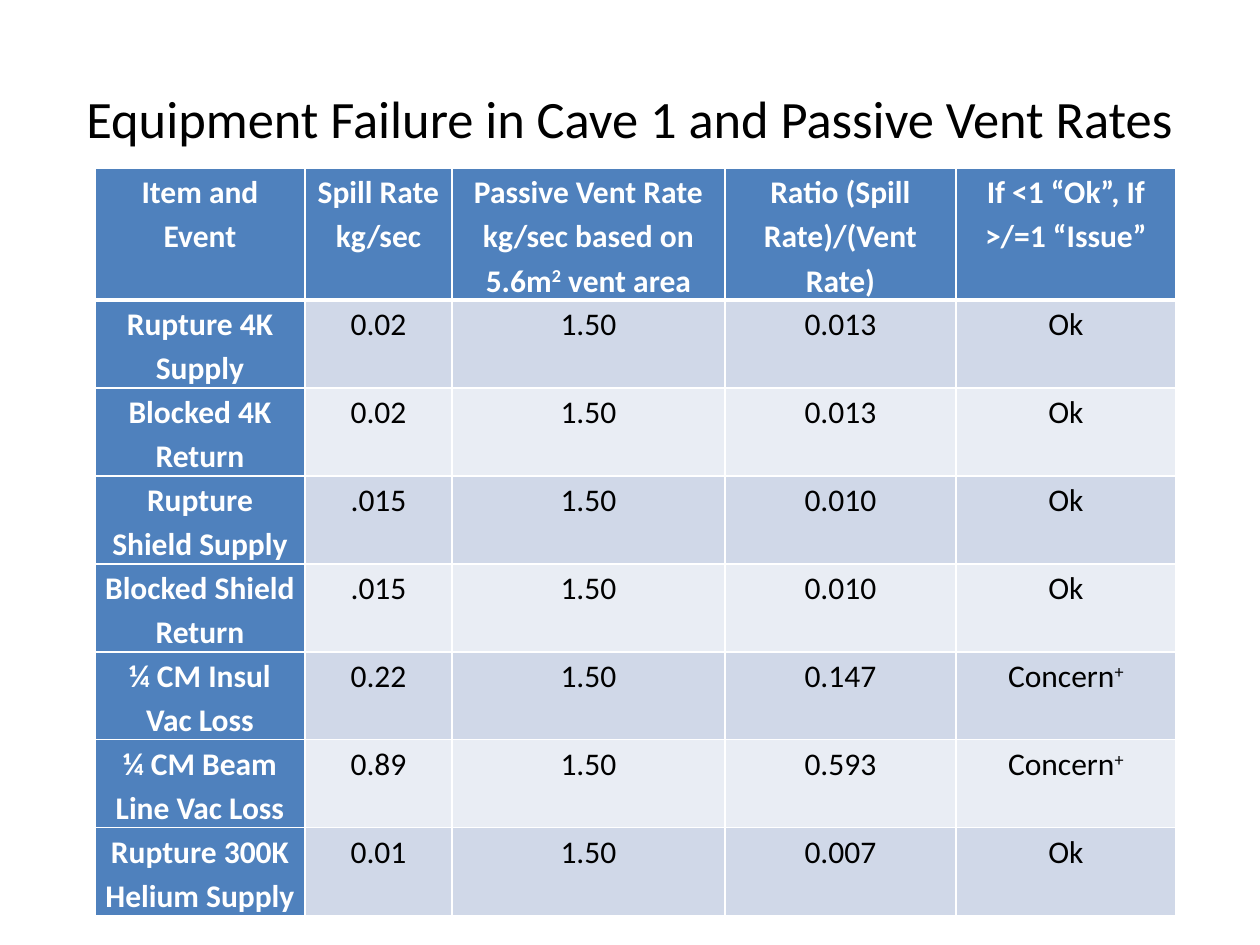
"""Build the slide on equipment failure and passive vent rates."""
import pptx
import pptx.dml.color
import pptx.enum.text
import pptx.oxml
import pptx.oxml.ns
import pptx.util

PX = 914400 / 126
COLORS = {"black": "000000", "white": "FFFFFF", "blue": "4F81BD",
          "dark_band": "D0D8E8", "light_band": "E9EDF4"}
COLUMN_WIDTHS = [210, 147, 273, 231, 220]
HEADER_HEIGHT, ROW_HEIGHT = 132, 88
VENT_RATE = "1.50"
HEADINGS = ["Item and Event", "Spill Rate kg/sec",
            "Passive Vent Rate kg/sec based on 5.6m^2^ vent area",
            "Ratio (Spill Rate)/(Vent Rate)", "If <1 “Ok”, If >/=1 “Issue”"]
FAILURES = [
    ("Rupture 4K Supply", "0.02", "0.013", "Ok"),
    ("Blocked 4K Return", "0.02", "0.013", "Ok"),
    ("Rupture Shield Supply", ".015", "0.010", "Ok"),
    ("Blocked Shield Return", ".015", "0.010", "Ok"),
    ("¼ CM Insul Vac Loss", "0.22", "0.147", "Concern^+^"),
    ("¼ CM Beam Line Vac Loss", "0.89", "0.593", "Concern^+^"),
    ("Rupture 300K Helium Supply", "0.01", "0.007", "Ok"),
]


def emu(pixels):
    return pptx.util.Emu(round(pixels * PX))


def rgb(name):
    return pptx.dml.color.RGBColor.from_string(COLORS[name])


class SlideBuilder:
    """Holds the text style and the current page."""

    def __init__(self, page, font="Calibri"):
        self.page = page
        self.font = font

    def add_text(self, frame, text, size, color, bold=False, spacing=1.0):
        """Set centred text, raising the parts between carets."""
        frame.word_wrap = True
        para = frame.paragraphs[0]
        para.alignment = pptx.enum.text.PP_ALIGN.CENTER
        para.line_spacing = spacing
        values = {"name": self.font, "size": pptx.util.Pt(size), "bold": bold}
        for index, part in enumerate(text.split("^")):
            if not part:
                continue
            span = para.add_run()
            span.text = part
            for key, value in values.items():
                setattr(span.font, key, value)
            span.font.color.rgb = rgb(color)
            if index % 2:
                span._r.get_or_add_rPr().set("baseline", "30000")

    def title(self, text, left, top, width, height):
        """Add the slide title."""
        box = self.page.shapes.add_textbox(*map(emu, (left, top, width, height)))
        box.text_frame.vertical_anchor = pptx.enum.text.MSO_ANCHOR.MIDDLE
        self.add_text(box.text_frame, text, 30, "black")

    def borders(self, cell, widths):
        """Draw the white borders of a cell, widths in points by side."""
        properties = cell._tc.get_or_add_tcPr()
        for side, width in widths.items():
            properties.append(pptx.oxml.parse_xml(
                f'<a:ln{side} {pptx.oxml.ns.nsdecls("a")} w="{pptx.util.Pt(width)}">'
                f'<a:solidFill><a:srgbClr val="{COLORS["white"]}"/></a:solidFill>'
                f'</a:ln{side}>'))

    def cell(self, cell, text, row, column):
        """Style and fill one table cell by its row and column."""
        heading = row == 0 or column == 0
        margins = {"margin_left": 9, "margin_right": 9,
                   "margin_top": 0, "margin_bottom": 0}
        for key, value in margins.items():
            setattr(cell, key, emu(value))
        self.borders(cell, {"L": 1, "R": 1, "T": 3 if row == 1 else 1,
                            "B": 3 if row == 0 else 1})
        band = "dark_band" if row % 2 else "light_band"
        cell.fill.solid()
        cell.fill.fore_color.rgb = rgb("blue" if heading else band)
        self.add_text(cell.text_frame, text, 18, "white" if heading else "black",
                      bold=heading, spacing=1.15)

    def table(self, rows, left, top, widths, heights):
        """Add a table from rows of text."""
        frame = self.page.shapes.add_table(
            len(rows), len(widths),
            *map(emu, (left, top, sum(widths), sum(heights))))
        table = frame.table
        table.first_col = True
        for column, width in zip(table.columns, widths):
            column.width = emu(width)
        for row, height in zip(table.rows, heights):
            row.height = emu(height)
        for row, texts in enumerate(rows):
            for column, text in enumerate(texts):
                self.cell(table.cell(row, column), text, row, column)


def main():
    deck = pptx.Presentation()
    deck.slide_width, deck.slide_height = emu(1260), emu(945)
    builder = SlideBuilder(deck.slides.add_slide(deck.slide_layouts[6]))
    builder.title("Equipment Failure in Cave 1 and Passive Vent Rates",
                  63, 38, 1134, 158)
    rows = [HEADINGS] + [[event, spill, VENT_RATE, ratio, verdict]
                         for event, spill, ratio, verdict in FAILURES]
    heights = [HEADER_HEIGHT] + [ROW_HEIGHT] * len(FAILURES)
    builder.table(rows, 95, 168, COLUMN_WIDTHS, heights)
    deck.save("out.pptx")


if __name__ == "__main__":
    main()
